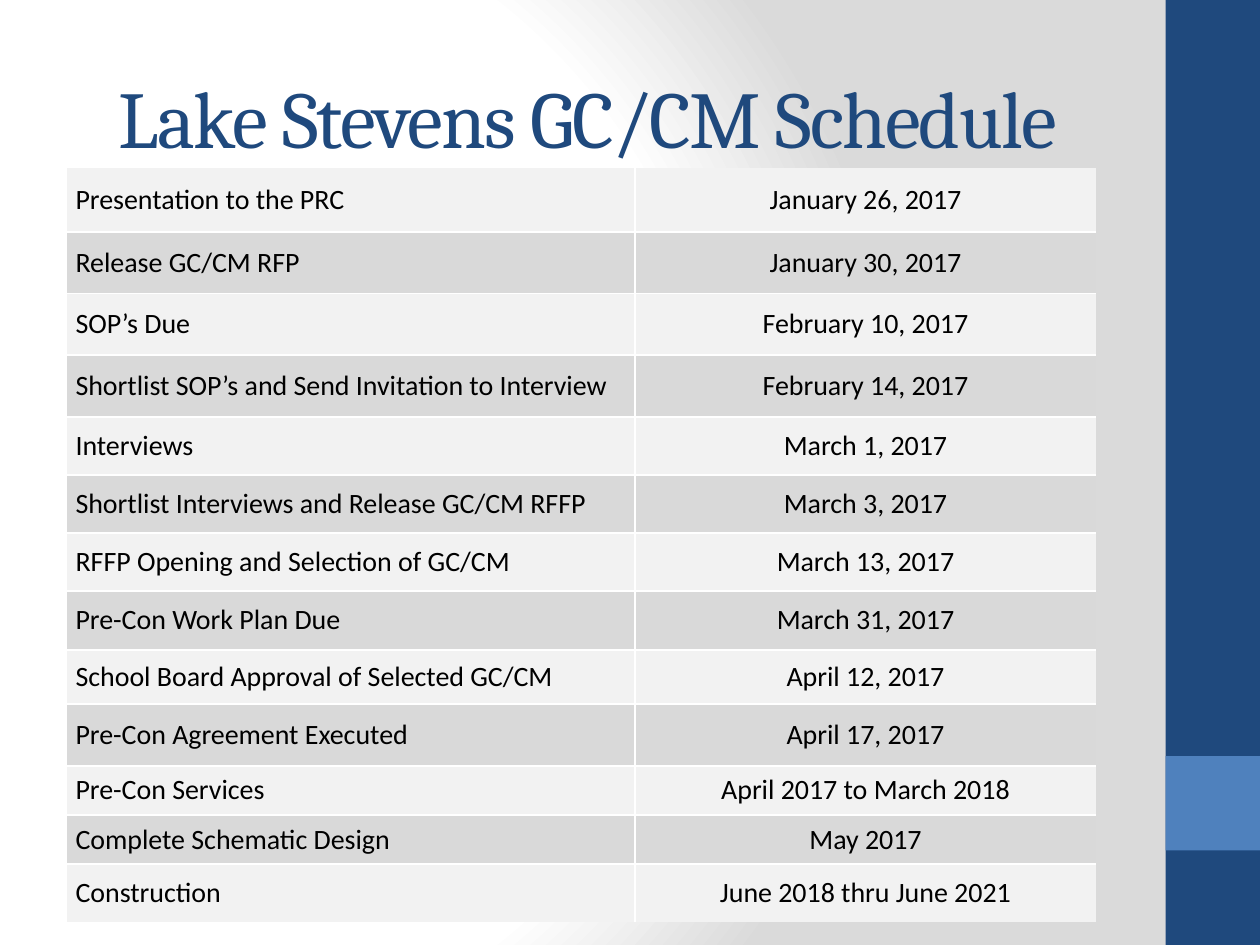
import pptx
import pptx.dml.color
import pptx.enum.shapes
import pptx.enum.text
import pptx.oxml
import pptx.oxml.ns
import pptx.util
from pptx.util import Inches

COLORS = {
    "navy": "1F497D",
    "blue": "4F81BD",
    "white": "FFFFFF",
    "edge": "DADADA",
    "light": "F2F2F2",
    "dark": "D9D9D9",
    "text": "000000",
}

SCHEDULE = [
    ("Presentation to the PRC", "January 26, 2017", 0.51),
    ("Release GC/CM RFP", "January 30, 2017", 0.49),
    ("SOP’s Due", "February 10, 2017", 0.49),
    ("Shortlist SOP’s and Send Invitation to Interview", "February 14, 2017", 0.49),
    ("Interviews", "March 1, 2017", 0.46),
    ("Shortlist Interviews and Release GC/CM RFFP", "March 3, 2017", 0.46),
    ("RFFP Opening and Selection of GC/CM", "March 13, 2017", 0.46),
    ("Pre-Con Work Plan Due", "March 31, 2017", 0.47),
    ("School Board Approval of Selected GC/CM", "April 12, 2017", 0.43),
    ("Pre-Con Agreement Executed", "April 17, 2017", 0.49),
    ("Pre-Con Services", "April 2017 to March 2018", 0.39),
    ("Complete Schematic Design", "May 2017", 0.39),
    ("Construction", "June 2018 thru June 2021", 0.46),
]
COLUMN_WIDTHS = (4.51, 3.66)


def rgb(name):
    return pptx.dml.color.RGBColor.from_string(COLORS[name])


def add_run(p, text, font, size, color):
    r = p.add_run()
    r.text = text
    r.font.name = font
    r.font.size = pptx.util.Pt(size)
    r.font.color.rgb = rgb(color)
    return r


def set_background(s):
    """Radial gradient, white at left and grey towards the right."""
    stops = "".join(
        f'<a:gs pos="{pos * 1000}"><a:srgbClr val="{COLORS[name]}"/></a:gs>'
        for pos, name in ((0, "white"), (75, "white"), (100, "edge"))
    )
    bg = pptx.oxml.parse_xml(
        f'<p:bg {pptx.oxml.ns.nsdecls("p", "a")}><p:bgPr>'
        f'<a:gradFill rotWithShape="1"><a:gsLst>{stops}</a:gsLst>'
        '<a:path path="circle">'
        '<a:fillToRect l="20000" t="50000" r="100000" b="50000"/>'
        "</a:path></a:gradFill><a:effectLst/></p:bgPr></p:bg>"
    )
    s.element.cSld.insert(0, bg)


def add_side_bar(s, left, top, width, height):
    """Navy bar with a blue square that ends one width above its foot."""
    square_top = top + height - 2 * width
    for y, h, color in ((top, height, "navy"), (square_top, width, "blue")):
        sp = s.shapes.add_shape(
            pptx.enum.shapes.MSO_SHAPE.RECTANGLE, left, y, width, h
        )
        sp.shadow.inherit = False
        sp.fill.solid()
        sp.fill.fore_color.rgb = rgb(color)
        sp.line.fill.background()


def add_title(s, left, top, width, height):
    tf = s.shapes.add_textbox(left, top, width, height).text_frame
    tf.word_wrap = True
    tf.vertical_anchor = pptx.enum.text.MSO_ANCHOR.MIDDLE
    p = tf.paragraphs[0]
    p.alignment = pptx.enum.text.PP_ALIGN.CENTER
    r = add_run(p, "Lake Stevens GC/CM Schedule", "Cambria", 46, "navy")
    r.font._element.set("spc", "-100")


def set_borders(cell, sides):
    """White 1 pt lines on the sides named, none on the others."""
    tcPr = cell._tc.get_or_add_tcPr()
    for i, side in enumerate("LRTB"):
        fill = "<a:noFill/>"
        if side in sides:
            fill = f'<a:solidFill><a:srgbClr val="{COLORS["white"]}"/></a:solidFill>'
        ln = pptx.oxml.parse_xml(
            f'<a:ln{side} {pptx.oxml.ns.nsdecls("a")} w="12700">{fill}</a:ln{side}>'
        )
        tcPr.insert(i, ln)


def fill_cell(cell, text, color, align):
    cell.fill.solid()
    cell.fill.fore_color.rgb = rgb(color)
    cell.margin_left = cell.margin_right = Inches(0.07)
    cell.margin_top = cell.margin_bottom = 0
    cell.vertical_anchor = pptx.enum.text.MSO_ANCHOR.MIDDLE
    p = cell.text_frame.paragraphs[0]
    p.alignment = align
    add_run(p, text, "Calibri", 16, "text")


def add_schedule(s, left, top, width, height):
    table = s.shapes.add_table(
        len(SCHEDULE), len(COLUMN_WIDTHS), left, top, width, height
    ).table
    table.first_row = table.horz_banding = False
    for column, w in zip(table.columns, COLUMN_WIDTHS):
        column.width = Inches(w)
    aligns = (pptx.enum.text.PP_ALIGN.LEFT, pptx.enum.text.PP_ALIGN.CENTER)
    last = len(SCHEDULE) - 1
    for i, (step, date, h) in enumerate(SCHEDULE):
        table.rows[i].height = Inches(h)
        color = "dark" if i % 2 else "light"
        for j, text in enumerate((step, date)):
            cell = table.cell(i, j)
            fill_cell(cell, text, color, aligns[j])
            inner = "RL"[j] + ("T" if i > 0 else "") + ("B" if i < last else "")
            set_borders(cell, inner)


def main():
    prs = pptx.Presentation()
    prs.slide_width, prs.slide_height = Inches(10), Inches(7.5)
    s = prs.slides.add_slide(prs.slide_layouts[6])
    set_background(s)
    add_side_bar(s, Inches(9.25), 0, Inches(0.75), prs.slide_height)
    add_title(s, Inches(0.5), Inches(0.3), Inches(8.33), Inches(1.25))
    add_schedule(s, Inches(0.53), Inches(1.33), Inches(8.17), Inches(6))
    prs.save("out.pptx")


if __name__ == "__main__":
    main()
